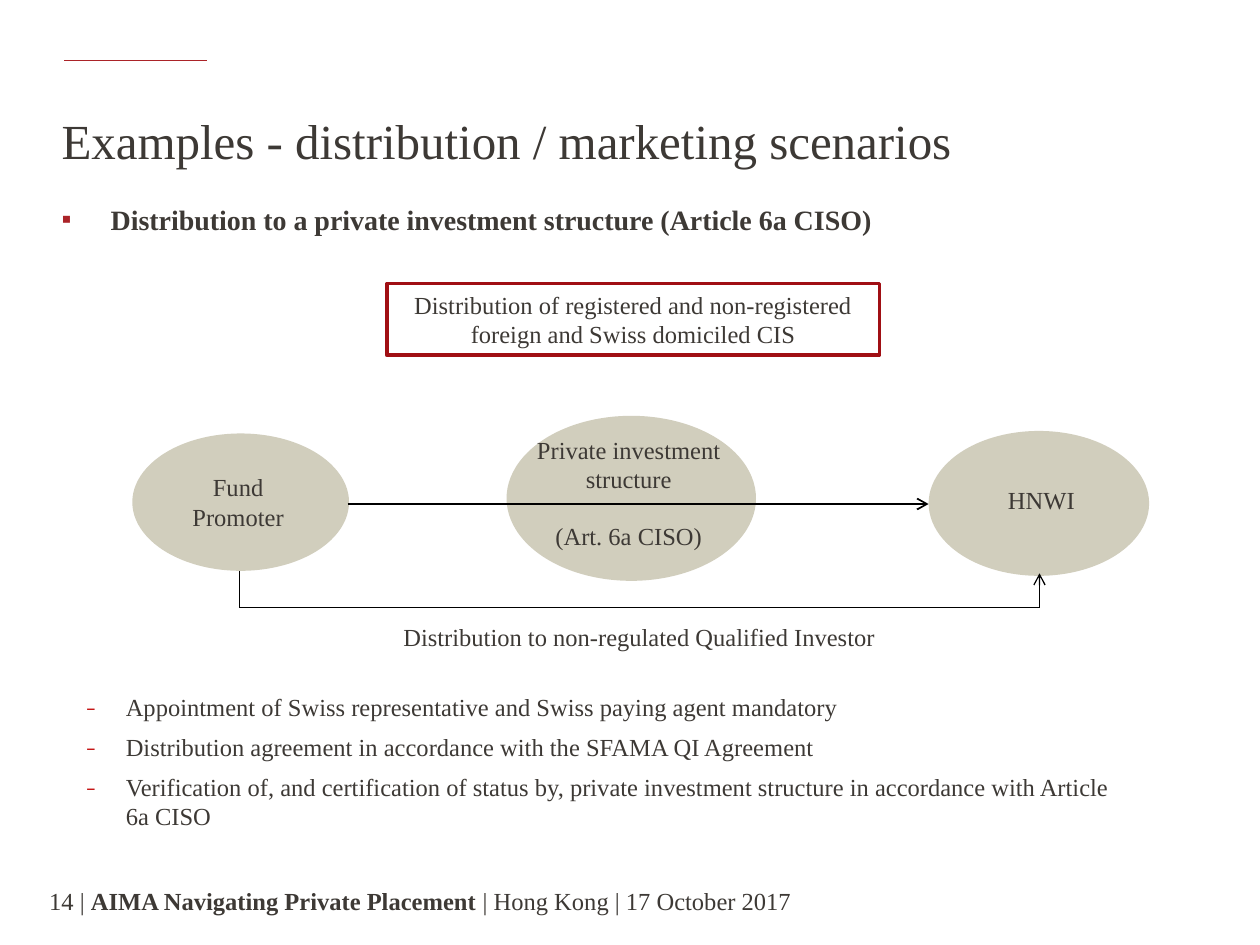
"""Build the slide on distribution to a private investment structure."""
from lxml.etree import SubElement
from pptx import Presentation
from pptx.dml.color import RGBColor
from pptx.enum.shapes import MSO_CONNECTOR, MSO_SHAPE
from pptx.enum.text import MSO_ANCHOR, PP_ALIGN
from pptx.oxml.ns import qn
from pptx.util import Inches, Pt

INK = RGBColor(0x3D, 0x39, 0x35)
RED = RGBColor(0xAB, 0x23, 0x28)
BORDER_RED = RGBColor(0xA0, 0x0F, 0x14)
DASH_RED = RGBColor(0xC0, 0x00, 0x00)
SAND = RGBColor(0xD1, 0xCE, 0xBD)
WHITE = RGBColor(0xFF, 0xFF, 0xFF)
BLACK = RGBColor(0x00, 0x00, 0x00)

presentation = Presentation()
presentation.slide_width = Inches(10)
presentation.slide_height = Inches(7.5)
slide = presentation.slides.add_slide(presentation.slide_layouts[6])
column = presentation.slide_width // 100
row = presentation.slide_height // 75


def write(shape, paragraphs, size=14, bold=False, align=PP_ALIGN.CENTER):
    frame = shape.text_frame
    frame.word_wrap = True
    frame.text = "\n".join(paragraphs)
    for paragraph in frame.paragraphs:
        paragraph.alignment = align
        for run in paragraph.runs:
            run.font.name = "Times New Roman"
            run.font.size = Pt(size)
            run.font.bold = bold
            run.font.color.rgb = INK
    return frame


def add_bullets(frame, character, color, indent):
    for paragraph in frame.paragraphs:
        paragraph.space_after = Pt(6)
        properties = paragraph._p.get_or_add_pPr()
        properties.set("marL", str(int(indent)))
        properties.set("indent", str(-int(indent)))
        bullet_color = SubElement(properties, qn("a:buClr"))
        SubElement(bullet_color, qn("a:srgbClr")).set("val", str(color))
        SubElement(properties, qn("a:buFont")).set("typeface", "Times New Roman")
        SubElement(properties, qn("a:buChar")).set("char", character)


title = slide.shapes.add_textbox(3.9 * column, 9.1 * row, 91.4 * column, 7.8 * row)
title_frame = write(title, ["Examples - distribution / marketing scenarios"], 28, align=PP_ALIGN.LEFT)
title_frame.paragraphs[0].line_spacing = Pt(27.7)

heading = slide.shapes.add_textbox(3.9 * column, 15.6 * row, 91.4 * column, 4 * row)
heading_frame = write(heading, ["Distribution to a private investment structure (Article 6a CISO)"],
                      16, True, PP_ALIGN.LEFT)
add_bullets(heading_frame, "▪", RED, 3.9 * column)

for left, top, width, height in [
    (10.5, 34.4, 17.2, 10.9),
    (40.2, 33, 19.8, 13.1),
    (73.7, 34.2, 17.5, 11.5),
]:
    ellipse = slide.shapes.add_shape(
        MSO_SHAPE.OVAL, left * column, top * row, width * column, height * row)
    ellipse.shadow.inherit = False
    ellipse.fill.solid()
    ellipse.fill.fore_color.rgb = SAND
    ellipse.line.fill.background()

for start_x, start_y, end_x, end_y, color, weight, arrow in [
    (16.4, 4.8, 5.1, 4.8, RED, 1, False),
    (27.6, 40, 73.7, 40, BLACK, 1, True),
    (19, 45.3, 19, 48.2, BLACK, 0.75, False),
    (19, 48.2, 82.5, 48.2, BLACK, 0.75, False),
    (82.5, 48.2, 82.5, 45.5, BLACK, 0.75, True),
]:
    connector = slide.shapes.add_connector(
        MSO_CONNECTOR.STRAIGHT, int(start_x * column), int(start_y * row),
        int(end_x * column), int(end_y * row))
    connector.line.color.rgb = color
    connector.line.width = Pt(weight)
    if arrow:
        SubElement(connector.line._get_or_add_ln(), qn("a:tailEnd")).set("type", "arrow")
    SubElement(connector._element.spPr, qn("a:effectLst"))

for left, top, width, height, paragraphs in [
    (41.3, 34, 17.2, 10.4, ["Private investment structure", "(Art. 6a CISO)"]),
    (75.6, 38, 14.1, 3.4, ["HNWI"]),
    (19, 48.9, 63.5, 5.7, ["Distribution to non-regulated Qualified Investor"]),
    (12.2, 37, 13.4, 5.7, ["Fund Promoter"]),
]:
    label = slide.shapes.add_textbox(left * column, top * row, width * column, height * row)
    label_frame = write(label, paragraphs)
    for paragraph in label_frame.paragraphs[1:]:
        paragraph.space_before = Pt(16)

scope = slide.shapes.add_shape(
    MSO_SHAPE.RECTANGLE, 30.7 * column, 22.5 * row, 39.1 * column, 5.7 * row)
scope.shadow.inherit = False
scope.fill.solid()
scope.fill.fore_color.rgb = WHITE
scope.line.color.rgb = BORDER_RED
scope.line.width = Pt(2)
write(scope, ["Distribution of registered and non-registered foreign and Swiss domiciled CIS"])

requirements = slide.shapes.add_textbox(5.9 * column, 54.4 * row, 83.2 * column, 12.1 * row)
requirements_frame = write(requirements, [
    "Appointment of Swiss representative and Swiss paying agent mandatory",
    "Distribution agreement in accordance with the SFAMA QI Agreement",
    "Verification of, and certification of status by, private investment structure "
    "in accordance with Article 6a CISO",
], align=PP_ALIGN.LEFT)
add_bullets(requirements_frame, "˗", DASH_RED, 3.1 * column)

footer = slide.shapes.add_textbox(3.9 * column, 70.3 * row, 63.4 * column, 2.3 * row)
footer_frame = footer.text_frame
footer_frame.margin_left = footer_frame.margin_top = footer_frame.margin_bottom = 0
footer_frame.vertical_anchor = MSO_ANCHOR.MIDDLE
for text in ["14 | ", "AIMA Navigating Private Placement ", "| Hong Kong | 17 October 2017"]:
    run = footer_frame.paragraphs[0].add_run()
    run.text = text
    run.font.name = "Times New Roman"
    run.font.size = Pt(14)
    run.font.bold = text.startswith("AIMA")
    run.font.color.rgb = INK

presentation.save("out.pptx")
